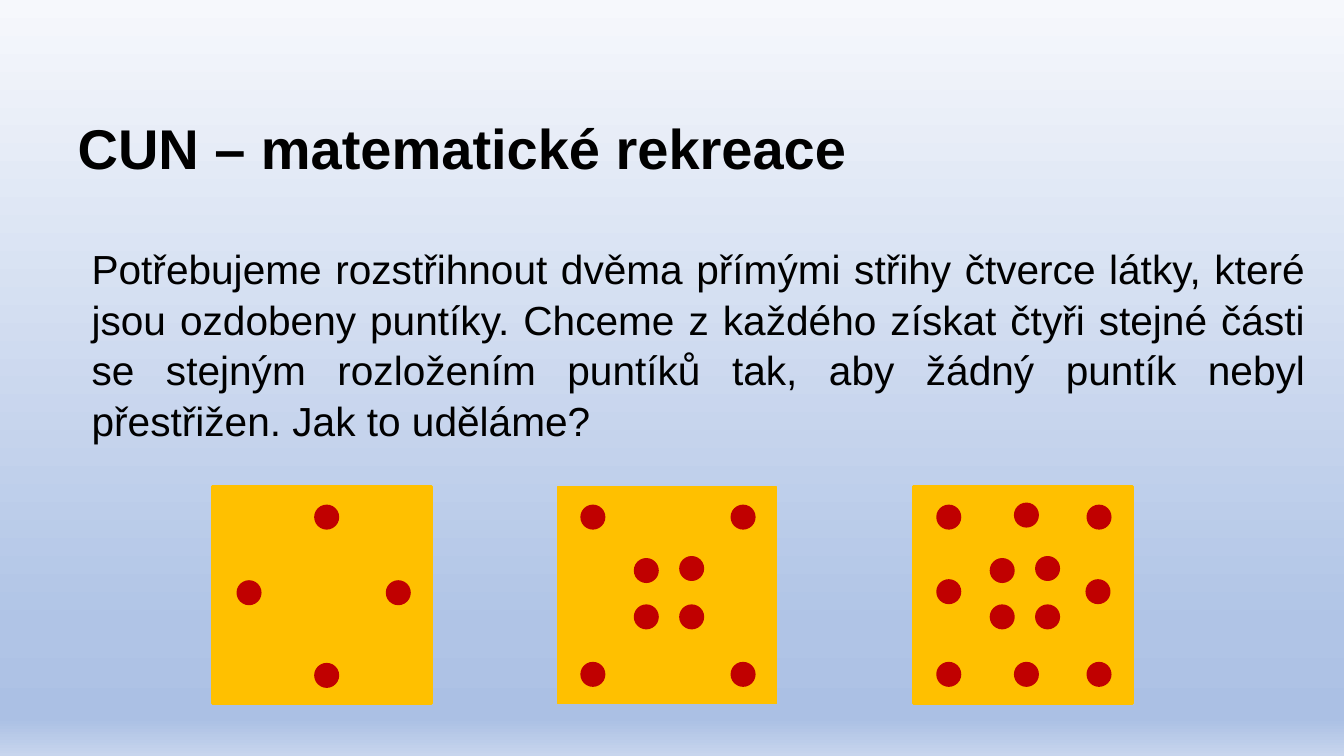
from lxml import etree
from pptx import Presentation
from pptx.dml.color import RGBColor
from pptx.enum.shapes import MSO_SHAPE
from pptx.enum.text import MSO_ANCHOR, PP_ALIGN
from pptx.oxml.ns import qn
from pptx.util import Inches, Pt

SQUARE = MSO_SHAPE.RECTANGLE
DOT = MSO_SHAPE.OVAL
JUSTIFY = PP_ALIGN.JUSTIFY
BOTTOM = MSO_ANCHOR.BOTTOM
TOP = MSO_ANCHOR.TOP

COLORS = {"text": "000000", "cloth": "FFC000", "dot": "C00000"}
SKY_STOPS = [(0, "F6F8FC"), (83, "B0C4E6"), (95, "ABC0E4"), (100, "C7D5ED")]

CLOTH_TOP = 4.83
CLOTH_SIZE = (2.17, 2.15)
DOT_SIZE = (0.22, 0.22)

DIAMOND = [(1.02, 1.76), (0.25, 0.94), (1.02, 0.19), (1.73, 0.94)]
CORNERS = [(x, y) for y in (0.19, 1.75) for x in (1.73, 0.24)]
CENTRE = [(0.77, 1.18), (1.22, 1.18), (0.77, 0.72), (1.22, 0.7)]
EDGES = [(1.01, 1.75), (0.24, 0.93), (1.01, 0.17), (1.72, 0.93)]
CLOTHS = [
    (2.11, 2, DIAMOND),
    (5.53, 1, CORNERS + CENTRE),
    (9.06, 2, CORNERS + EDGES + CENTRE),
]

TITLE = "CUN – matematické rekreace"
TASK = (
    "Potřebujeme rozstřihnout dvěma přímými střihy čtverce látky, které jsou "
    "ozdobeny puntíky. Chceme z každého získat čtyři stejné části se stejným "
    "rozložením puntíků tak, aby žádný puntík nebyl přestřižen. Jak to uděláme?"
)


def paint_background(slide):
    fill = slide.background.fill
    fill.gradient()
    fill.gradient_angle = 270
    stops = next(slide.element.iter(qn("a:gsLst")))
    for default_stop in list(stops):
        stops.remove(default_stop)
    for percent, color in SKY_STOPS:
        stop = etree.SubElement(stops, qn("a:gs"), pos=str(percent * 1000))
        etree.SubElement(stop, qn("a:srgbClr"), val=color)


def place(shape, left, top, width, height):
    shape.left, shape.top = Inches(left), Inches(top)
    shape.width, shape.height = Inches(width), Inches(height)


def write_text(shape, text, size, anchor, bold=False):
    frame = shape.text_frame
    frame.text = text
    frame.word_wrap = True
    frame.vertical_anchor = anchor
    paragraph = frame.paragraphs[0]
    paragraph.alignment = JUSTIFY
    font = paragraph.runs[0].font
    font.name = "Arial"
    font.size = Pt(size)
    font.bold = bold
    font.color.rgb = RGBColor.from_string(COLORS["text"])
    return paragraph


def add_figure(group, kind, left, top, size, color, line_width):
    figure = group.shapes.add_shape(
        kind, Inches(left), Inches(top), *(Inches(side) for side in size)
    )
    figure.shadow.inherit = False
    figure.fill.solid()
    figure.fill.fore_color.rgb = RGBColor.from_string(COLORS[color])
    figure.line.color.rgb = RGBColor.from_string(COLORS[color])
    figure.line.width = Pt(line_width)


def add_cloth(slide, left, line_width, dots):
    cloth = slide.shapes.add_group_shape()
    add_figure(cloth, SQUARE, left, CLOTH_TOP, CLOTH_SIZE, "cloth", line_width)
    for x, y in dots:
        add_figure(cloth, DOT, left + x, CLOTH_TOP + y, DOT_SIZE, "dot", 2)


def main():
    presentation = Presentation()
    presentation.slide_width = Inches(13.33)
    presentation.slide_height = Inches(7.5)
    slide = presentation.slides.add_slide(presentation.slide_layouts[5])
    paint_background(slide)

    title = slide.shapes.title
    place(title, 0.67, 0.75, 12.09, 1.09)
    write_text(title, TITLE, 40, BOTTOM, bold=True)

    task = slide.shapes.add_textbox(0, 0, 0, 0)
    place(task, 0.81, 2.35, 12.25, 4.96)
    task_paragraph = write_text(task, TASK, 29, TOP)
    task_paragraph.line_spacing = 1.04
    task_paragraph.space_after = Pt(12)

    for left, line_width, dots in CLOTHS:
        add_cloth(slide, left, line_width, dots)

    presentation.save("out.pptx")


if __name__ == "__main__":
    main()
